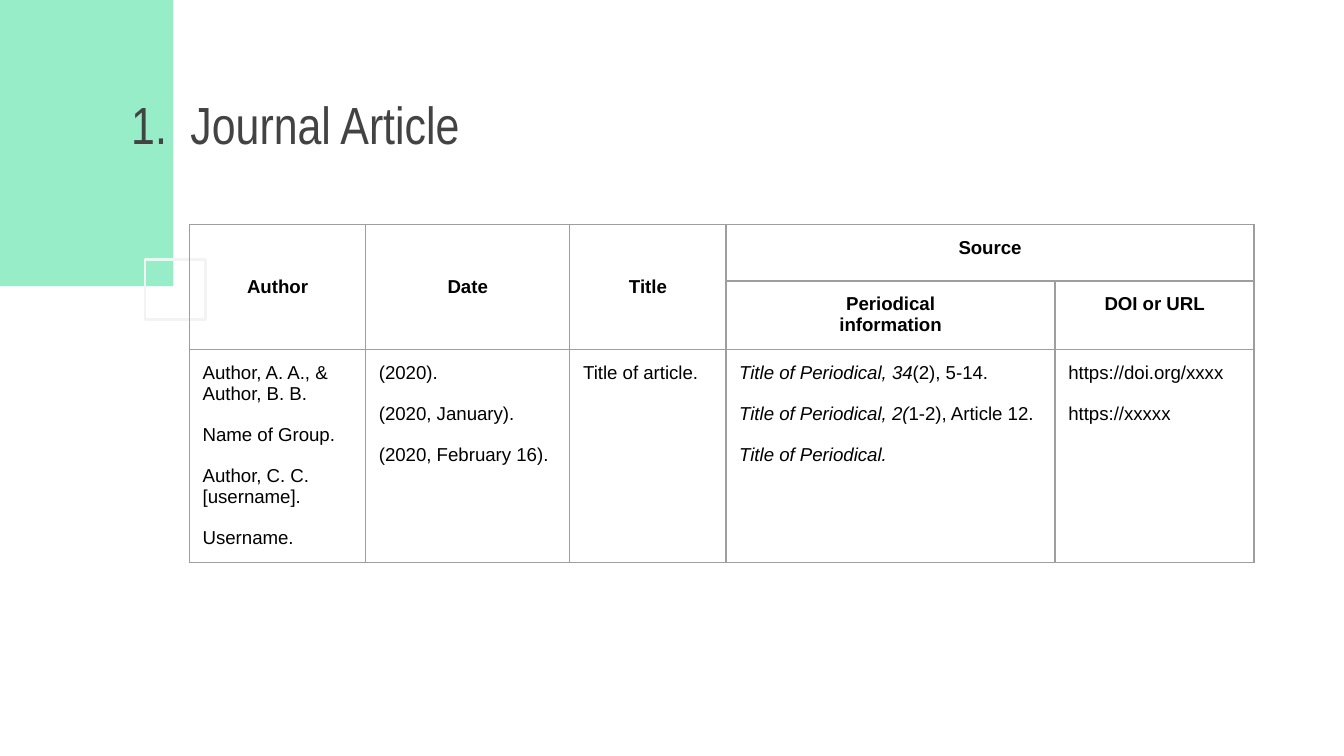
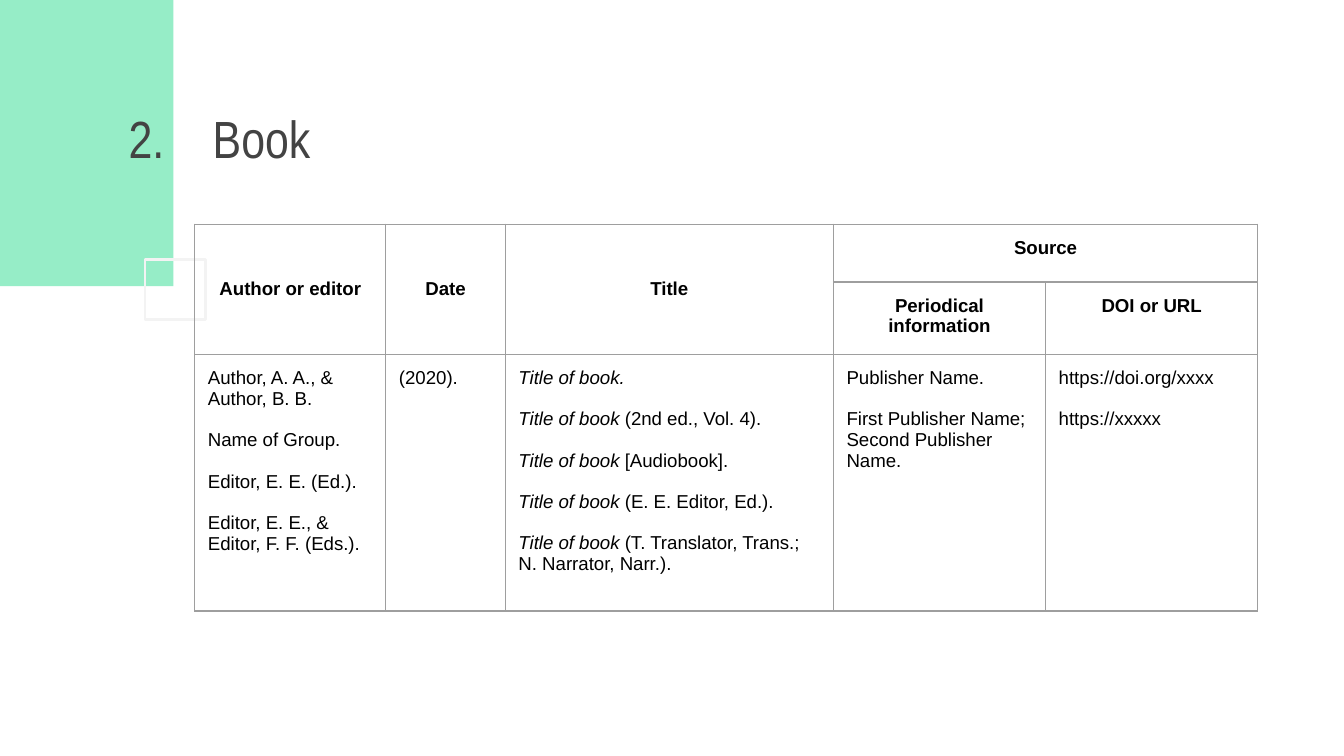
from lxml.etree import SubElement
from pptx import Presentation
from pptx.dml.color import RGBColor
from pptx.enum.shapes import MSO_SHAPE as Shape
from pptx.enum.text import MSO_ANCHOR as Anchor, MSO_AUTO_SIZE as AutoSize, PP_ALIGN as Align
from pptx.oxml import parse_xml
from pptx.oxml.ns import nsdecls, qn
from pptx.util import Cm, Pt

COLORS = {"mint": "96EDC7", "frame": "F3F3F3", "title": "434343", "text": "000000", "grid": "9E9E9E"}
TITLE_FONT, BODY_FONT = "Arial Narrow", "Arial"
INSET = Cm(0.25)
TABLE_TOP = 4.24
SOURCE_HEADS = ["Periodical\ninformation", "DOI or URL"]
LINKS = ["https://doi.org/xxxx", "https://xxxxx"]

# Asterisks enclose italics; a line break starts a new line of the same entry.
REFERENCES = [
    {
        "number": 1,
        "title": "Journal Article",
        "title_box": (2.08, 1.5, 10.36, 1.68),
        "title_margin": 1.27,
        "title_hang": 1.12,
        "table_left": 3.58,
        "columns": [3.33, 3.86, 2.95, 6.22, 3.76],
        "rows": [1.07, 1.07, 1.07],
        "heads": ["Author", "Date", "Title"],
        "examples": [
            ["Author, A. A., &\nAuthor, B. B.", "Name of Group.", "Author, C. C.\n[username].", "Username."],
            ["(2020).", "(2020, January).", "(2020, February 16)."],
            ["Title of article."],
            ["*Title of Periodical, 34*(2), 5-14.", "*Title of Periodical, 2(*1-2), Article 12.",
             "*Title of Periodical.*"],
            LINKS,
        ],
    },
    {
        "number": 2,
        "title": "Book",
        "title_box": (2.18, 1.75, 7.47, 1.78),
        "title_margin": 1.59,
        "title_hang": 1.59,
        "table_left": 3.68,
        "columns": [3.61, 2.26, 6.2, 4.01, 4.01],
        "rows": [1.09, 1.37, 4.85],
        "heads": ["Author or editor", "Date", "Title"],
        "examples": [
            ["Author, A. A., &\nAuthor, B. B.", "Name of Group.", "Editor, E. E. (Ed.).",
             "Editor, E. E., &\nEditor, F. F. (Eds.)."],
            ["(2020)."],
            ["*Title of book.*", "*Title of book *(2nd ed., Vol. 4).", "*Title of book *[Audiobook].",
             "*Title of book *(E. E. Editor, Ed.).",
             "*Title of book* (T. Translator, Trans.; N. Narrator, Narr.)."],
            ["Publisher Name.", "First Publisher Name; Second Publisher Name."],
            LINKS,
        ],
    },
]


def rgb(name):
    return RGBColor.from_string(COLORS[name])


def write(frame, entries, size=10, font=BODY_FONT, color="text", bold=False, align=Align.LEFT, gap=11):
    lines = [(line, entry_no > 0 and line_no == 0)
             for entry_no, entry in enumerate(entries)
             for line_no, line in enumerate(entry.split("\n"))]
    for index, (line, starts_entry) in enumerate(lines):
        paragraph = frame.add_paragraph() if index else frame.paragraphs[0]
        paragraph.alignment = align
        paragraph.space_before = Pt(gap if starts_entry else 0)
        for part_no, part in enumerate(line.split("*")):
            if part:
                run = paragraph.add_run()
                run.text = part
                run.font.size = Pt(size)
                run.font.name = font
                run.font.bold = bold
                run.font.italic = part_no % 2 == 1
                run.font.color.rgb = rgb(color)


def add_box(slide, left, top, width, height, fill=None, line=None):
    box = slide.shapes.add_shape(Shape.RECTANGLE, Cm(left), Cm(top), Cm(width), Cm(height))
    box.shadow.inherit = False
    if fill:
        box.fill.solid()
        box.fill.fore_color.rgb = rgb(fill)
    else:
        box.fill.background()
    if line:
        box.line.color.rgb = rgb(line)
        box.line.width = Pt(1.5)
    else:
        box.line.fill.background()
    return box


def add_title(slide, reference):
    title = slide.shapes.title
    title.left, title.top, title.width, title.height = map(Cm, reference["title_box"])
    frame = title.text_frame
    frame.auto_size = AutoSize.NONE
    frame.vertical_anchor = Anchor.TOP
    frame.margin_left = frame.margin_right = frame.margin_top = frame.margin_bottom = INSET
    write(frame, [reference["title"]], size=28, font=TITLE_FONT, color="title")
    numbering = frame.paragraphs[0]._p.get_or_add_pPr()
    numbering.set("marL", str(Cm(reference["title_margin"])))
    numbering.set("indent", str(-Cm(reference["title_hang"])))
    bullet_color = SubElement(numbering, qn("a:buClr"))
    SubElement(bullet_color, qn("a:srgbClr"), val=COLORS["title"])
    SubElement(numbering, qn("a:buFont"), typeface=TITLE_FONT)
    SubElement(numbering, qn("a:buAutoNum"), type="arabicPeriod", startAt=str(reference["number"]))


def format_cell(cell):
    cell.fill.background()
    cell.margin_left = cell.margin_right = cell.margin_top = cell.margin_bottom = INSET
    properties = cell._tc.get_or_add_tcPr()
    for index, side in enumerate("LRTB"):
        properties.insert(index, parse_xml(
            f'<a:ln{side} {nsdecls("a")} w="{Pt(0.75)}"><a:solidFill>'
            f'<a:srgbClr val="{COLORS["grid"]}"/></a:solidFill></a:ln{side}>'))


def add_reference_table(slide, reference):
    columns, rows = reference["columns"], reference["rows"]
    table = slide.shapes.add_table(
        len(rows), len(columns), Cm(reference["table_left"]), Cm(TABLE_TOP),
        Cm(sum(columns)), Cm(sum(rows))).table
    table.first_row = table.horz_banding = False
    for column, width in zip(table.columns, columns):
        column.width = Cm(width)
    for row, height in zip(table.rows, rows):
        row.height = Cm(height)
    for cell in table.iter_cells():
        format_cell(cell)

    heads = reference["heads"]
    source_col = len(heads)
    for col in range(source_col):
        table.cell(0, col).merge(table.cell(1, col))
        table.cell(0, col).vertical_anchor = Anchor.MIDDLE
    table.cell(0, source_col).merge(table.cell(0, len(columns) - 1))

    placed_heads = [(0, col, head) for col, head in enumerate(heads + ["Source"])]
    placed_heads += [(1, col, head) for col, head in enumerate(SOURCE_HEADS, source_col)]
    for row, col, head in placed_heads:
        write(table.cell(row, col).text_frame, [head], bold=True, align=Align.CENTER)
    for col, entries in enumerate(reference["examples"]):
        write(table.cell(2, col).text_frame, entries)


def add_reference_slide(deck, reference):
    slide = deck.slides.add_slide(deck.slide_layouts[5])
    band = add_box(slide, 0, 0, 3.28, 5.41, fill="mint")
    slide.shapes.title._element.addprevious(band._element)
    add_title(slide, reference)
    add_box(slide, 2.74, 4.9, 1.14, 1.14, line="frame")
    add_reference_table(slide, reference)


def main():
    deck = Presentation()
    deck.slide_width, deck.slide_height = Cm(25.4), Cm(14.29)
    for reference in REFERENCES:
        add_reference_slide(deck, reference)
    deck.save("out.pptx")


if __name__ == "__main__":
    main()
